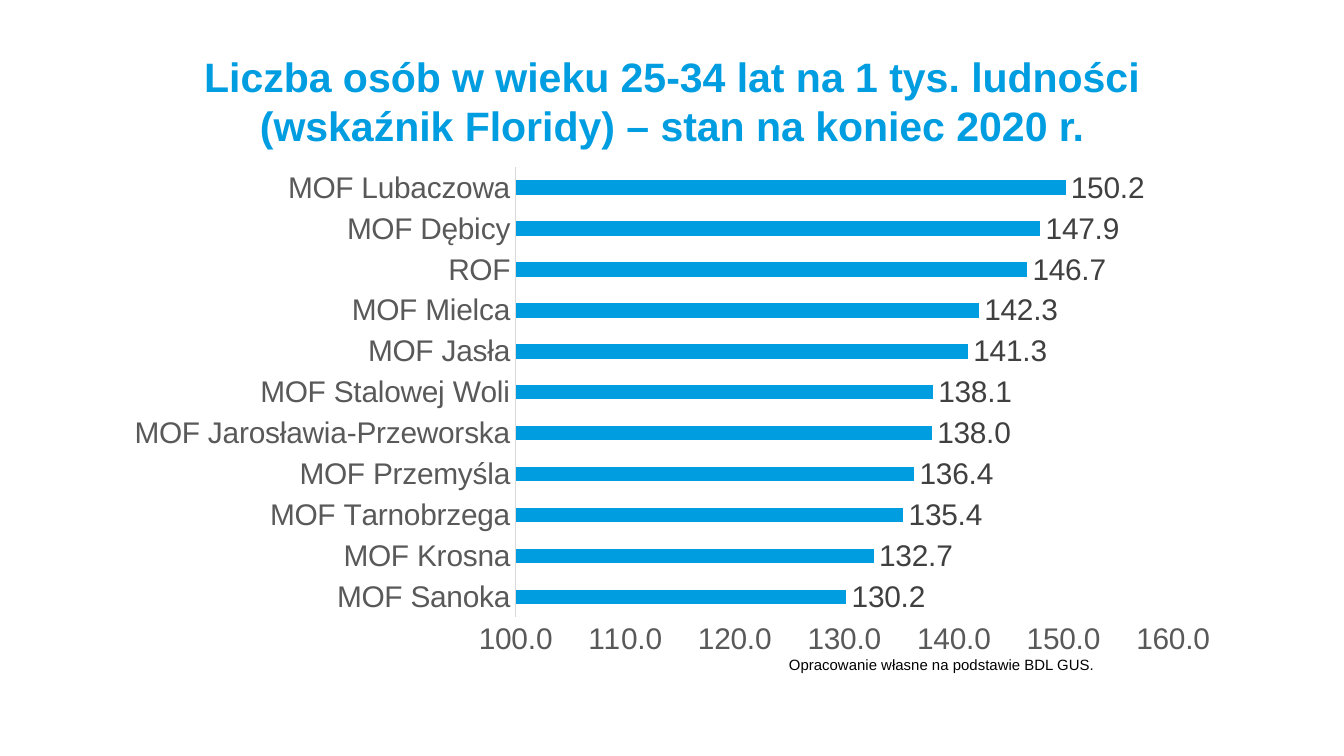
"""Build a slide with a bar chart of the Florida index for functional areas."""
from pptx import Presentation
from pptx.chart.data import CategoryChartData
from pptx.dml.color import RGBColor
from pptx.enum.chart import XL_CHART_TYPE, XL_LABEL_POSITION, XL_TICK_MARK
from pptx.enum.text import MSO_ANCHOR, PP_ALIGN
from pptx.util import Cm, Pt

BAR = XL_CHART_TYPE.BAR_CLUSTERED
OUTSIDE = XL_LABEL_POSITION.OUTSIDE_END
NO_TICK = XL_TICK_MARK.NONE
TOP = MSO_ANCHOR.TOP
CENTER, LEFT = PP_ALIGN.CENTER, PP_ALIGN.LEFT

TITLE = ("Liczba osób w wieku 25-34 lat na 1 tys. ludności "
         "(wskaźnik Floridy) – stan na koniec 2020 r.")
SOURCE = "Opracowanie własne na podstawie BDL GUS."
AREAS = [
    ("MOF Sanoka", 130.2),
    ("MOF Krosna", 132.7),
    ("MOF Tarnobrzega", 135.4),
    ("MOF Przemyśla", 136.4),
    ("MOF Jarosławia-Przeworska", 138.0),
    ("MOF Stalowej Woli", 138.1),
    ("MOF Jasła", 141.3),
    ("MOF Mielca", 142.3),
    ("ROF", 146.7),
    ("MOF Dębicy", 147.9),
    ("MOF Lubaczowa", 150.2),
]
BLUE, BLACK, AXIS_TEXT, LABEL_TEXT, AXIS_LINE = "009DE0", "000000", "595959", "404040", "D9D9D9"
MARGIN, CONTENT_WIDTH = Cm(2.12), Cm(21.17)


def color(value):
    return RGBColor.from_string(value)


def set_font(font, size, value, bold=False):
    font.name = "Arial"
    font.size = Pt(size)
    font.bold = bold
    font.color.rgb = color(value)


def write(box, text, size, value, bold=False, align=LEFT, spacing=None):
    box.text_frame.word_wrap = True
    box.text_frame.vertical_anchor = TOP
    para = box.text_frame.paragraphs[0]
    para.alignment = align
    para.line_spacing = spacing
    span = para.add_run()
    span.text = text
    set_font(span.font, size, value, bold)


def add_title(page):
    box = page.shapes.title
    box.left, box.top, box.width, box.height = MARGIN, Cm(0.99), CONTENT_WIDTH, Cm(2.26)
    frame = box.text_frame
    frame.margin_left = frame.margin_right = frame.margin_top = frame.margin_bottom = 0
    write(box, TITLE, 22, BLUE, bold=True, align=CENTER, spacing=Pt(26))


def style_axis(axis):
    axis.major_tick_mark = axis.minor_tick_mark = NO_TICK
    axis.has_major_gridlines = False
    set_font(axis.tick_labels.font, 16, AXIS_TEXT)


def add_bars(page):
    data = CategoryChartData(number_format="0.0")
    data.categories = [name for name, _ in AREAS]
    data.add_series("Series 1", [value for _, value in AREAS])
    chart = page.shapes.add_chart(BAR, MARGIN, Cm(2.97), CONTENT_WIDTH, Cm(9.6), data).chart
    chart.has_legend = chart.has_title = False
    set_font(chart.font, 16, BLACK)

    names, scale = chart.category_axis, chart.value_axis
    style_axis(names)
    names.format.line.color.rgb = color(AXIS_LINE)
    names.format.line.width = Pt(0.75)
    style_axis(scale)
    scale.format.line.fill.background()
    scale.minimum_scale, scale.maximum_scale, scale.major_unit = 100, 160, 10
    scale.tick_labels.number_format = "0.0"
    scale.tick_labels.number_format_is_linked = False

    plot = chart.plots[0]
    plot.gap_width = 182
    plot.vary_by_categories = False
    series = plot.series[0]
    series.format.fill.solid()
    series.format.fill.fore_color.rgb = color(BLUE)
    labels = series.data_labels
    labels.show_value = True
    labels.position = OUTSIDE
    labels.number_format = "0.0"
    labels.number_format_is_linked = False
    set_font(labels.font, 16, LABEL_TEXT)


def main():
    deck = Presentation()
    deck.slide_width, deck.slide_height = Cm(25.4), Cm(14.29)
    page = deck.slides.add_slide(deck.slide_layouts[5])
    add_title(page)
    add_bars(page)
    source = page.shapes.add_textbox(Cm(14.66), Cm(12.27), Cm(8.99), Cm(0.6))
    write(source, SOURCE, 8, BLACK)
    deck.save("out.pptx")


if __name__ == "__main__":
    main()
